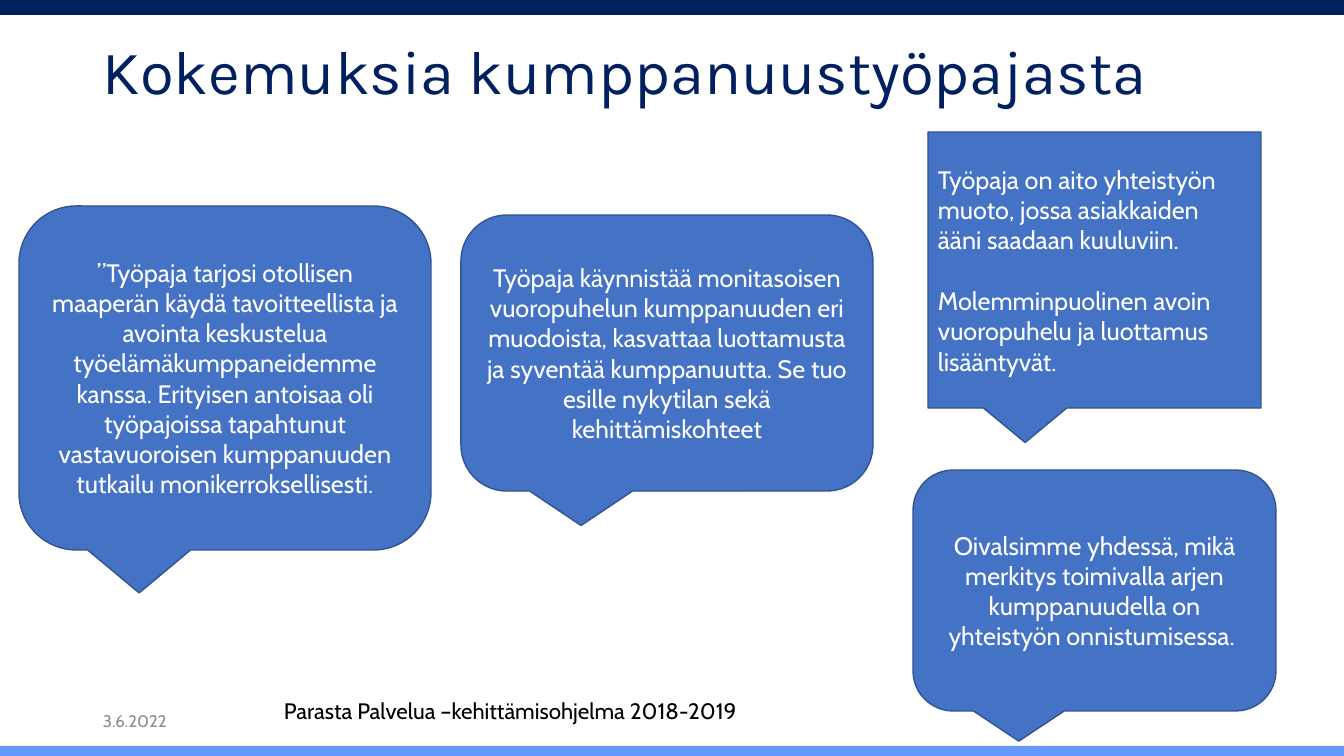
"""Build the slide of quotes from the partnership workshop."""
import pptx
import pptx.util
import pptx.dml.color
import pptx.enum.shapes
import pptx.enum.text

KINDS = pptx.enum.shapes.MSO_SHAPE
ALIGN = pptx.enum.text.PP_ALIGN
ANCHOR = pptx.enum.text.MSO_ANCHOR
ROUND = KINDS.ROUNDED_RECTANGULAR_CALLOUT
SQUARE = KINDS.RECTANGULAR_CALLOUT

BARS = [((0, 0, 1344, 15), "002060"), ((0, 746, 1344, 15), "6699FF")]

TITLE = "Kokemuksia kumppanuustyöpajasta"
DATE = "3.6.2022"
SOURCE = "Parasta Palvelua –kehittämisohjelma 2018-2019"

QUOTES = [
    (ROUND, (19, 206, 412, 344), ALIGN.CENTER, [
        "”Työpaja tarjosi otollisen maaperän käydä tavoitteellista ja "
        "avointa keskustelua työelämäkumppaneidemme kanssa. Erityisen "
        "antoisaa oli työpajoissa tapahtunut vastavuoroisen "
        "kumppanuuden tutkailu monikerroksellisesti."]),
    (ROUND, (913, 470, 363, 241), ALIGN.CENTER, [
        "Oivalsimme yhdessä, mikä merkitys toimivalla arjen "
        "kumppanuudella on yhteistyön onnistumisessa. "]),
    (ROUND, (461, 215, 412, 276), ALIGN.CENTER, [
        "Työpaja käynnistää monitasoisen vuoropuhelun kumppanuuden eri "
        "muodoista, kasvattaa luottamusta ja syventää kumppanuutta. "
        "Se tuo esille nykytilan sekä kehittämiskohteet"]),
    (SQUARE, (928, 132, 333, 276), ALIGN.LEFT, [
        "Työpaja on aito yhteistyön \vmuoto, jossa asiakkaiden "
        "\vääni saadaan kuuluviin.",
        "Molemminpuolinen avoin vuoropuhelu ja luottamus lisääntyvät."]),
]


def px(size):
    return round(size * 914400 / 100.8)


def color(code):
    return pptx.dml.color.RGBColor.from_string(code)


def write(shape, lines, size, code, font="Cabin", align=ALIGN.LEFT,
          anchor=ANCHOR.MIDDLE, gap=0):
    frame = shape.text_frame
    frame.word_wrap = True
    frame.vertical_anchor = anchor
    frame.text = "\n".join(lines)
    for para in frame.paragraphs:
        para.alignment = align
        for run in para.runs:
            run.font.size = pptx.util.Pt(size)
            run.font.name = font
            run.font.color.rgb = color(code)
    for para in frame.paragraphs[:-1]:
        para.space_after = pptx.util.Pt(gap)
    return frame


def draw(slide, kind, box, fill, line=None):
    shape = slide.shapes.add_shape(kind, *map(px, box))
    shape.shadow.inherit = False
    shape.fill.solid()
    shape.fill.fore_color.rgb = color(fill)
    if line:
        shape.line.color.rgb = color(line)
        shape.line.width = pptx.util.Pt(1)
    else:
        shape.line.fill.background()
    return shape


def label(slide, box, text, *style, **more):
    shape = slide.shapes.add_textbox(*map(px, box))
    return write(shape, [text], *style, **more)


def main():
    deck = pptx.Presentation()
    deck.slide_width = px(1344)
    deck.slide_height = px(756)
    slide = deck.slides.add_slide(deck.slide_layouts[6])

    for box, fill in BARS:
        draw(slide, KINDS.RECTANGLE, box, fill)

    title = label(slide, (93, 39, 1159, 146), TITLE, 44, "002060", "Karla",
                  anchor=ANCHOR.BOTTOM)
    title.margin_bottom = px(77)
    title.paragraphs[0].line_spacing = 0.9
    label(slide, (93, 701, 302, 40), DATE, 12, "8C8C8C")

    for kind, box, align, lines in QUOTES:
        shape = draw(slide, kind, box, "4472C4", "325491")
        write(shape, lines, 18, "FFFFFF", align=align, gap=22)

    label(slide, (274, 692, 603, 37), SOURCE, 16, "000000",
          anchor=ANCHOR.TOP)
    deck.save("out.pptx")


if __name__ == "__main__":
    main()
